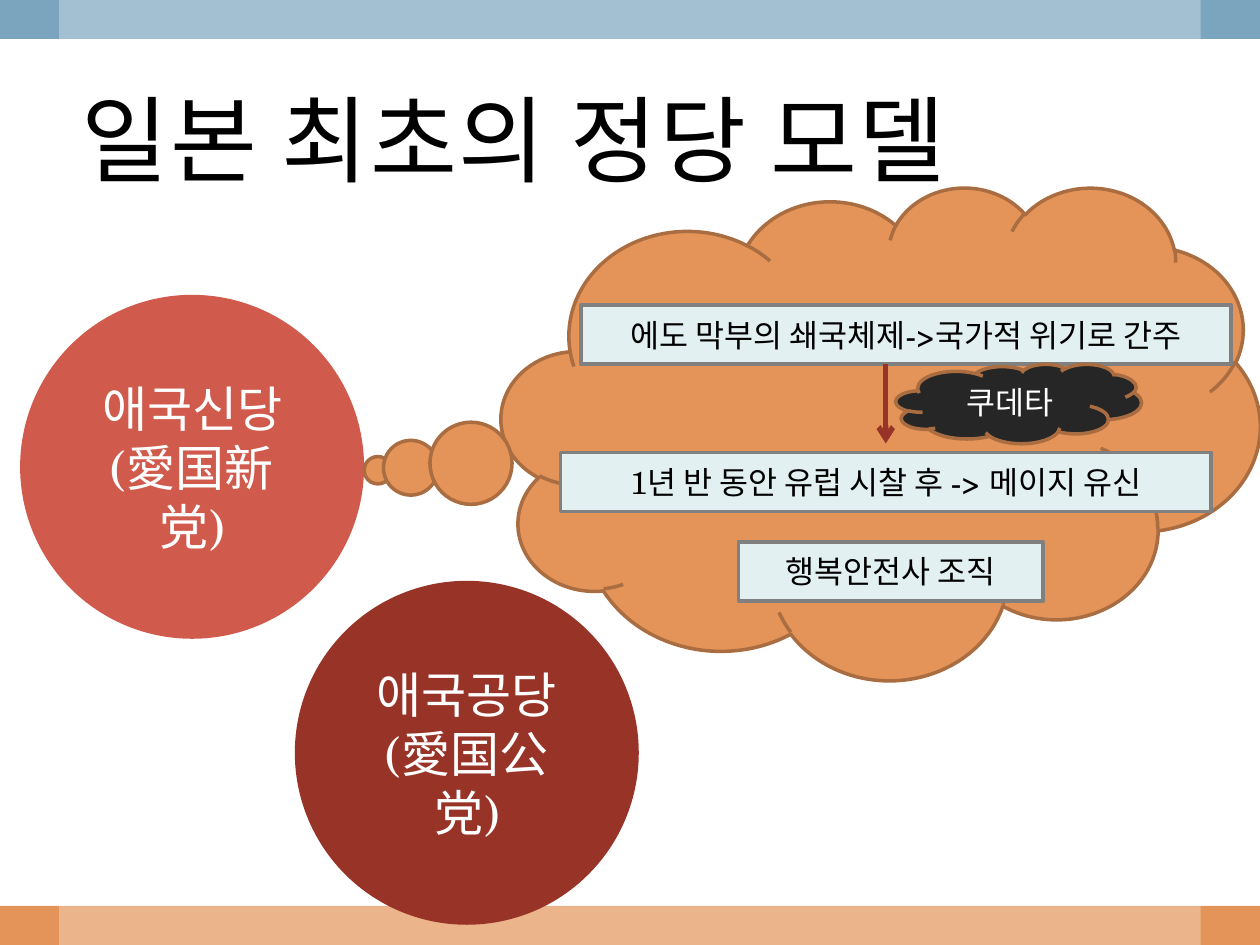
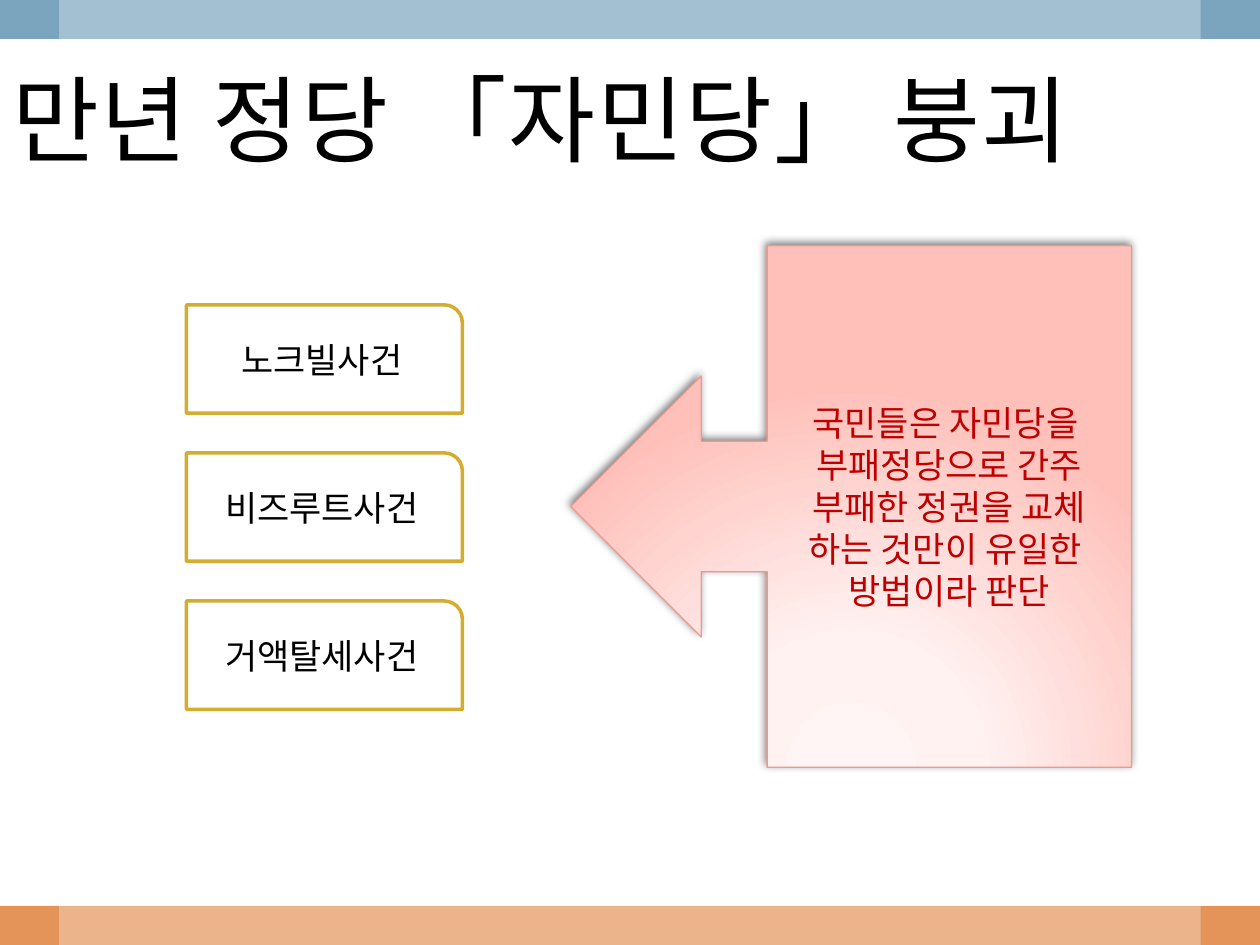
from lxml import etree
from pptx import Presentation
from pptx.dml.color import RGBColor
from pptx.enum.shapes import MSO_CONNECTOR, MSO_SHAPE
from pptx.enum.text import MSO_ANCHOR, PP_ALIGN
from pptx.oxml.ns import qn
from pptx.util import Inches, Pt

RECT, OVAL = MSO_SHAPE.RECTANGLE, MSO_SHAPE.OVAL
CLOUD, THOUGHT = MSO_SHAPE.CLOUD, MSO_SHAPE.CLOUD_CALLOUT
TAB, ARROW_BOX = MSO_SHAPE.ROUND_1_RECTANGLE, MSO_SHAPE.LEFT_ARROW_CALLOUT
STRAIGHT = MSO_CONNECTOR.STRAIGHT
MIDDLE, CENTER, LEFT = MSO_ANCHOR.MIDDLE, PP_ALIGN.CENTER, PP_ALIGN.LEFT

FONT = "TeX Gyre Schola"
SLIDE_W, SLIDE_H, BAND_H, MARGIN = 10, 7.5, 0.31, 0.47
WHITE, BLACK, CHARCOAL = "FFFFFF", "000000", "262626"
BLUE, ORANGE, BROWN = "7BA5BE", "E49458", "A96D41"
CORAL, MAROON, RED = "D05B4D", "973327", "C00000"
ICE, GRAY, GOLD, ROSE = "E2F0F1", "808080", "D4AC30", "EC9A90"
GLOW = [(0, "FFF5F5"), (34, "FFF2F1"), (100, "FFC0BA")]


def rgb(color):
    return RGBColor.from_string(color)


def add_xml(parent, tag, **attributes):
    return etree.SubElement(parent, qn(tag), attributes)


def write(shape, lines, size, color, align=CENTER):
    frame = shape.text_frame
    frame.word_wrap = True
    frame.vertical_anchor = MIDDLE
    frame.text = "\n".join(lines)
    for paragraph in frame.paragraphs:
        paragraph.alignment = align
        paragraph.font.name = FONT
        paragraph.font.size = Pt(size)
        paragraph.font.color.rgb = rgb(color)


def add_figure(slide, kind, box, fill, line=None, line_width=2,
               lines=(), size=18, color=BLACK):
    figure = slide.shapes.add_shape(kind, *map(Inches, box))
    figure.shadow.inherit = False
    figure.fill.solid()
    figure.fill.fore_color.rgb = rgb(fill)
    if line:
        figure.line.color.rgb = rgb(line)
        figure.line.width = Pt(line_width)
    else:
        figure.line.fill.background()
    if lines:
        write(figure, lines, size, color)
    return figure


def add_bands(slide):
    add_figure(slide, RECT, (0, SLIDE_H - BAND_H, SLIDE_W, BAND_H), ORANGE)
    add_figure(slide, RECT, (0, 0, SLIDE_W, BAND_H), BLUE)
    veil = add_figure(slide, RECT, (MARGIN, 0, SLIDE_W - 2 * MARGIN, SLIDE_H), WHITE)
    veil_color = veil.fill._xPr.find(qn("a:solidFill"))[0]
    add_xml(veil_color, "a:alpha", val="30000")


def add_title(slide, text, box):
    title = slide.shapes.add_textbox(*map(Inches, box))
    write(title, [text], 54, BLACK, LEFT)
    run = title.text_frame.paragraphs[0].runs[0]
    run.font._element.set("spc", "100")


def start_slide(deck, title, title_box):
    slide = deck.slides.add_slide(deck.slide_layouts[6])
    add_bands(slide)
    add_title(slide, title, title_box)
    return slide


def add_party(slide, left, top, fill, lines):
    add_figure(slide, OVAL, (left, top, 2.73, 2.73), fill,
               lines=lines, size=28, color=WHITE)


def add_down_arrow(slide, x, top, bottom):
    arrow = slide.shapes.add_connector(STRAIGHT, *map(Inches, (x, top, x, bottom)))
    arrow.line.color.rgb = rgb(MAROON)
    arrow.line.width = Pt(3)
    add_xml(arrow.line._get_or_add_ln(), "a:tailEnd", type="arrow")
    add_xml(arrow._element.spPr, "a:effectLst")


def add_background_story(slide, box):
    left, top, _, _ = box
    cloud = add_figure(slide, THOUGHT, box, ORANGE, BROWN)
    cloud.adjustments[0], cloud.adjustments[1] = -0.663, 0.076
    events = [
        (0.63, 0.94, 5.16, "에도 막부의 쇄국체제->국가적 위기로 간주"),
        (0.47, 2.11, 5.16, "1년 반 동안 유럽 시찰 후 -> 메이지 유신"),
        (1.88, 2.82, 2.42, "행복안전사 조직"),
    ]
    for x, y, width, event in events:
        add_figure(slide, RECT, (left + x, top + y, width, 0.47), ICE, GRAY,
                   lines=[event])
    add_down_arrow(slide, left + 3.05, top + 1.41, top + 2.04)
    add_figure(slide, CLOUD, (left + 3.13, top + 1.41, 1.95, 0.63), CHARCOAL, BROWN,
               lines=["쿠데타"], color=WHITE)


def add_scandals(slide, box, scandals):
    left, top, width, height = box
    tab_height = 0.86
    step = (height - tab_height) / (len(scandals) - 1)
    for row, scandal in enumerate(scandals):
        add_figure(slide, TAB, (left, top + row * step, width, tab_height),
                   WHITE, GOLD, lines=[scandal], size=20)


def add_glow(figure):
    figure.fill.gradient()
    gradient = figure.fill._xPr.find(qn("a:gradFill"))
    for child in list(gradient):
        gradient.remove(child)
    stops = add_xml(gradient, "a:gsLst")
    for position, color in GLOW:
        stop = add_xml(stops, "a:gs", pos=str(position * 1000))
        add_xml(stop, "a:srgbClr", val=color)
    circle = add_xml(gradient, "a:path", path="circle")
    add_xml(circle, "a:fillToRect", l="50000", t="155000", r="50000", b="-55000")


def add_soft_shadow(figure):
    effects = figure._element.spPr.find(qn("a:effectLst"))
    shadow = add_xml(effects, "a:outerShdw", blurRad=str(Pt(5)), dist=str(Pt(2)),
                     dir=str(245 * 60000), rotWithShape="0")
    shade = add_xml(shadow, "a:srgbClr", val=BLACK)
    add_xml(shade, "a:alpha", val="50000")


def add_verdict(slide, box, lines):
    verdict = add_figure(slide, ARROW_BOX, box, WHITE, ROSE, 0.75, lines, 20, RED)
    add_glow(verdict)
    add_soft_shadow(verdict)


def build_first_party(deck):
    slide = start_slide(deck, "일본 최초의 정당 모델", (0.55, 0.47, 8.95, 1.25))
    add_party(slide, 0.16, 2.34, CORAL, ["애국신당", "(愛国新党)"])
    add_background_story(slide, (3.98, 1.48, 6.02, 3.91))
    add_party(slide, 2.34, 4.61, MAROON, ["애국공당", "(愛国公党)"])


def build_party_collapse(deck):
    slide = start_slide(deck, "만년 정당 「자민당」 붕괴", (0, 0.31, 9.45, 1.25))
    add_scandals(slide, (1.48, 2.42, 2.19, 3.21),
                 ["노크빌사건", "비즈루트사건", "거액탈세사건"])
    add_verdict(slide, (4.53, 1.95, 4.45, 4.14),
                ["국민들은 자민당을 ", "부패정당으로 간주", "부패한 정권을 교체",
                 "하는 것만이 유일한 ", "방법이라 판단"])


def main():
    deck = Presentation()
    deck.slide_width, deck.slide_height = Inches(SLIDE_W), Inches(SLIDE_H)
    build_first_party(deck)
    build_party_collapse(deck)
    deck.save("out.pptx")


if __name__ == "__main__":
    main()
